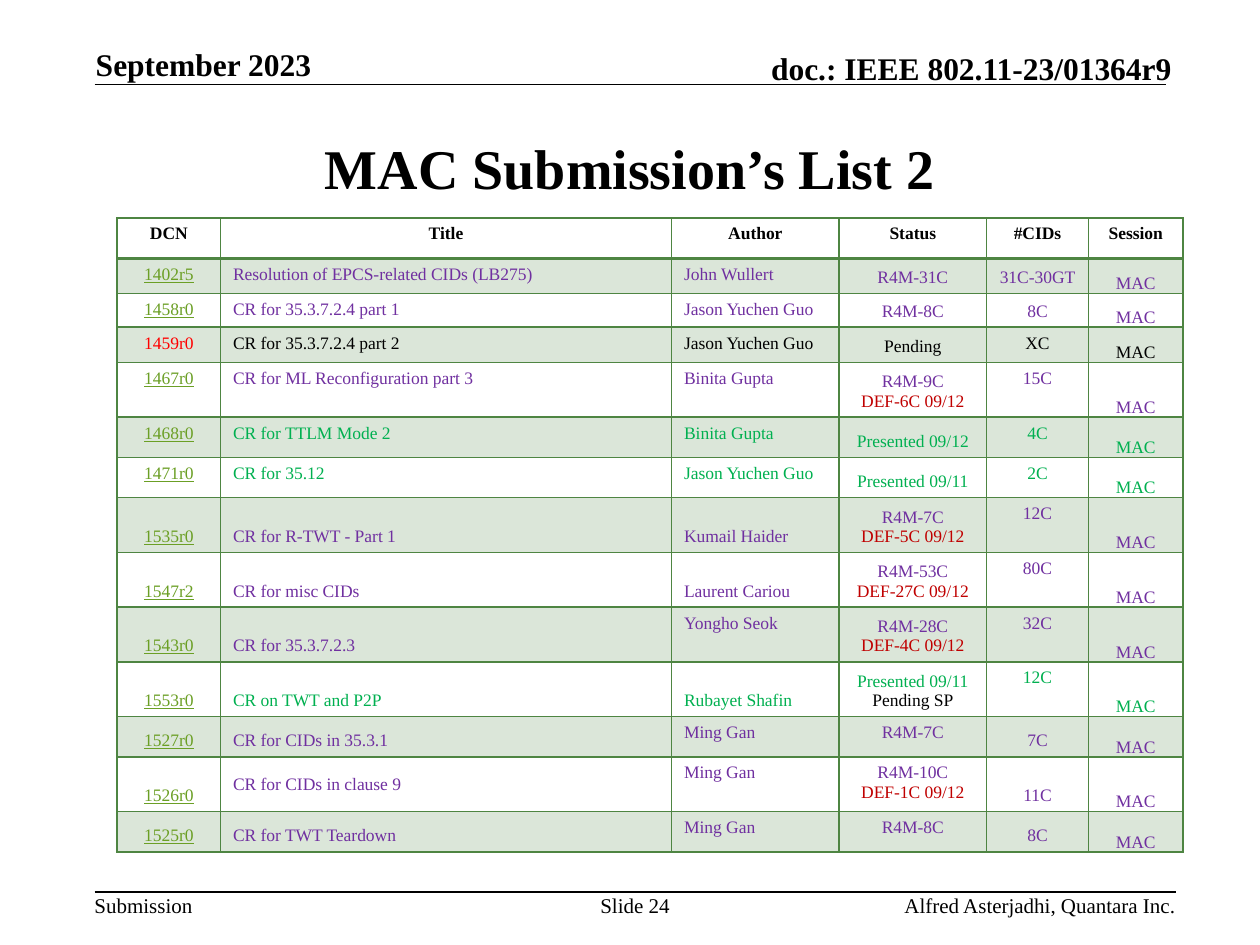
from lxml.etree import SubElement
from pptx import Presentation
from pptx.dml.color import RGBColor
from pptx.enum.shapes import MSO_CONNECTOR
from pptx.enum.text import MSO_ANCHOR, PP_ALIGN
from pptx.oxml.ns import qn
from pptx.util import Inches, Pt

BLACK = RGBColor(0x00, 0x00, 0x00)
RED = RGBColor(0xFF, 0x00, 0x00)
DARK_RED = RGBColor(0xC0, 0x00, 0x00)
PURPLE = RGBColor(0x70, 0x30, 0xA0)
GREEN = RGBColor(0x00, 0xB0, 0x50)
LINK = RGBColor(0x6B, 0x9F, 0x25)
FOREST = RGBColor(0x4E, 0x85, 0x42)

FONT = "Times New Roman"
LEFT, CENTER, RIGHT = PP_ALIGN.LEFT, PP_ALIGN.CENTER, PP_ALIGN.RIGHT
ANCHORS = {"t": MSO_ANCHOR.TOP, "m": MSO_ANCHOR.MIDDLE, "b": MSO_ANCHOR.BOTTOM}

HEADINGS = ["DCN", "Title", "Author", "Status", "#CIDs", "Session"]
COLUMN_WIDTHS = [0.82, 3.58, 1.33, 1.17, 0.81, 0.75]
COLUMN_ALIGNS = [CENTER, LEFT, LEFT, CENTER, CENTER, CENTER]
HEADING_HEIGHT = 0.32

SUBMISSIONS = [
    (0.28, PURPLE, "tttbb", "1402r5", "Resolution of EPCS-related CIDs (LB275)", "John Wullert", "R4M-31C", "31C-30GT"),
    (0.26, PURPLE, "tttbb", "1458r0", "CR for 35.3.7.2.4 part 1", "Jason Yuchen Guo", "R4M-8C", "8C"),
    (0.28, BLACK, "tttbt", "1459r0", "CR for 35.3.7.2.4 part 2", "Jason Yuchen Guo", "Pending", "XC"),
    (0.41, PURPLE, "tttbt", "1467r0", "CR for ML Reconfiguration part 3", "Binita Gupta", "R4M-9C\nDEF-6C 09/12", "15C"),
    (0.32, GREEN, "tttbt", "1468r0", "CR for TTLM Mode 2", "Binita Gupta", "Presented 09/12", "4C"),
    (0.32, GREEN, "tttbt", "1471r0", "CR for 35.12", "Jason Yuchen Guo", "Presented 09/11", "2C"),
    (0.41, PURPLE, "bbbbt", "1535r0", "CR for R-TWT - Part 1", "Kumail Haider", "R4M-7C\nDEF-5C 09/12", "12C"),
    (0.41, PURPLE, "bbbbt", "1547r2", "CR for misc CIDs", "Laurent Cariou", "R4M-53C\nDEF-27C 09/12", "80C"),
    (0.41, PURPLE, "bbtbt", "1543r0", "CR for 35.3.7.2.3", "Yongho Seok", "R4M-28C\nDEF-4C 09/12", "32C"),
    (0.41, GREEN, "bbbbt", "1553r0", "CR on TWT and P2P", "Rubayet Shafin", "Presented 09/11\nPending SP", "12C"),
    (0.32, PURPLE, "bbttb", "1527r0", "CR for CIDs in 35.3.1", "Ming Gan", "R4M-7C", "7C"),
    (0.41, PURPLE, "bmttb", "1526r0", "CR for CIDs in clause 9", "Ming Gan", "R4M-10C\nDEF-1C 09/12", "11C"),
    (0.32, PURPLE, "bbttb", "1525r0", "CR for TWT Teardown", "Ming Gan", "R4M-8C", "8C"),
]


def write_text(frame, text, size=12, color=BLACK, bold=False, underline=False, align=LEFT):
    for index, line in enumerate(text.split("\n")):
        para = frame.paragraphs[0] if index == 0 else frame.add_paragraph()
        para.alignment = align
        span = para.add_run()
        span.text = line
        span.font.name = FONT
        span.font.size = Pt(size)
        span.font.bold = bold
        span.font.underline = underline
        if line.startswith("DEF-"):
            span.font.color.rgb = DARK_RED
        elif line == "Pending SP":
            span.font.color.rgb = BLACK
        else:
            span.font.color.rgb = color


def add_text(page, left, top, width, height, text, anchor="t", **style):
    box = page.shapes.add_textbox(Inches(left), Inches(top), Inches(width), Inches(height))
    frame = box.text_frame
    frame.word_wrap = True
    frame.vertical_anchor = ANCHORS[anchor]
    frame.margin_left = frame.margin_right = 0
    frame.margin_top = frame.margin_bottom = 0
    write_text(frame, text, **style)


def add_rule(page, left, top, width):
    rule = page.shapes.add_connector(
        MSO_CONNECTOR.STRAIGHT, Inches(left), Inches(top), Inches(left + width), Inches(top))
    rule.line.color.rgb = BLACK
    rule.line.width = Pt(1)
    SubElement(rule._element.spPr, qn("a:effectLst"))


def add_header(page, left, top, width):
    add_rule(page, left, top + 0.31, width)
    add_text(page, left + 0.01, top, 2.05, 0.3, "September 2023", anchor="b", size=18, bold=True)
    add_text(page, left + width - 3.78, top + 0.03, 3.83, 0.3, "doc.: IEEE 802.11-23/01364r9",
             anchor="b", size=18, bold=True, align=RIGHT)


def add_footer(page, left, top, width):
    add_rule(page, left, top, width)
    add_text(page, left, top, 0.9, 0.2, "Submission")
    add_text(page, left + 4, top, 0.58, 0.4, "Slide 24", align=CENTER)
    add_text(page, left + width - 3.48, top, 3.48, 0.2, "Alfred Asterjadhi, Quantara Inc.", align=RIGHT)


def set_border(cell, side, width):
    line = SubElement(cell._tc.get_or_add_tcPr(), qn("a:" + side), w=str(Pt(width)))
    fill = SubElement(line, qn("a:solidFill"))
    SubElement(fill, qn("a:srgbClr"), val=str(FOREST))


def format_cell(cell, row, anchor, margins=True):
    cell.vertical_anchor = ANCHORS[anchor]
    cell.margin_left = cell.margin_right = Inches(0.1 if margins else 0)
    cell.margin_top = cell.margin_bottom = Inches(0.05 if margins else 0)
    set_border(cell, "lnL", 1)
    set_border(cell, "lnR", 1)
    set_border(cell, "lnT", 2 if row == 1 else 1)
    set_border(cell, "lnB", 2 if row == 0 else 1)
    if row % 2:
        cell.fill.solid()
        cell.fill.fore_color.rgb = FOREST
        tint = cell._tc.tcPr.find(qn("a:solidFill")).find(qn("a:srgbClr"))
        SubElement(tint, qn("a:alpha"), val="20000")
    else:
        cell.fill.background()


def add_submission_table(page, left, top):
    heights = [HEADING_HEIGHT] + [entry[0] for entry in SUBMISSIONS]
    holder = page.shapes.add_table(
        len(heights), len(HEADINGS), Inches(left), Inches(top),
        Inches(sum(COLUMN_WIDTHS)), Inches(sum(heights)))
    table = holder.table
    table.first_row = table.horz_banding = False
    for column, width in zip(table.columns, COLUMN_WIDTHS):
        column.width = Inches(width)
    for row, height in zip(table.rows, heights):
        row.height = Inches(height)

    for column, heading in enumerate(HEADINGS):
        cell = table.cell(0, column)
        format_cell(cell, 0, "t")
        write_text(cell.text_frame, heading, size=10, bold=True, align=CENTER)

    for row, (_, color, anchors, *texts) in enumerate(SUBMISSIONS, 1):
        for column, text in enumerate(texts + ["MAC"]):
            cell = table.cell(row, column)
            is_session = column == len(HEADINGS) - 1
            format_cell(cell, row, (anchors + "b")[column], margins=not is_session)
            pending = color == BLACK
            dcn_color = RED if pending else LINK
            write_text(cell.text_frame, text, size=10, align=COLUMN_ALIGNS[column],
                       color=dcn_color if column == 0 else color,
                       underline=column == 0 and not pending)


def main():
    deck = Presentation()
    deck.slide_width, deck.slide_height = Inches(10), Inches(7.5)
    page = deck.slides.add_slide(deck.slide_layouts[6])
    add_header(page, 0.75, 0.36, 8.5)
    add_footer(page, 0.75, 7.08, 8.58)
    add_text(page, 0.75, 0.75, 8.5, 1.16, "MAC Submission’s List 2",
             anchor="m", size=32, bold=True, align=CENTER)
    add_submission_table(page, 0.93, 1.73)
    deck.save("out.pptx")


if __name__ == "__main__":
    main()
